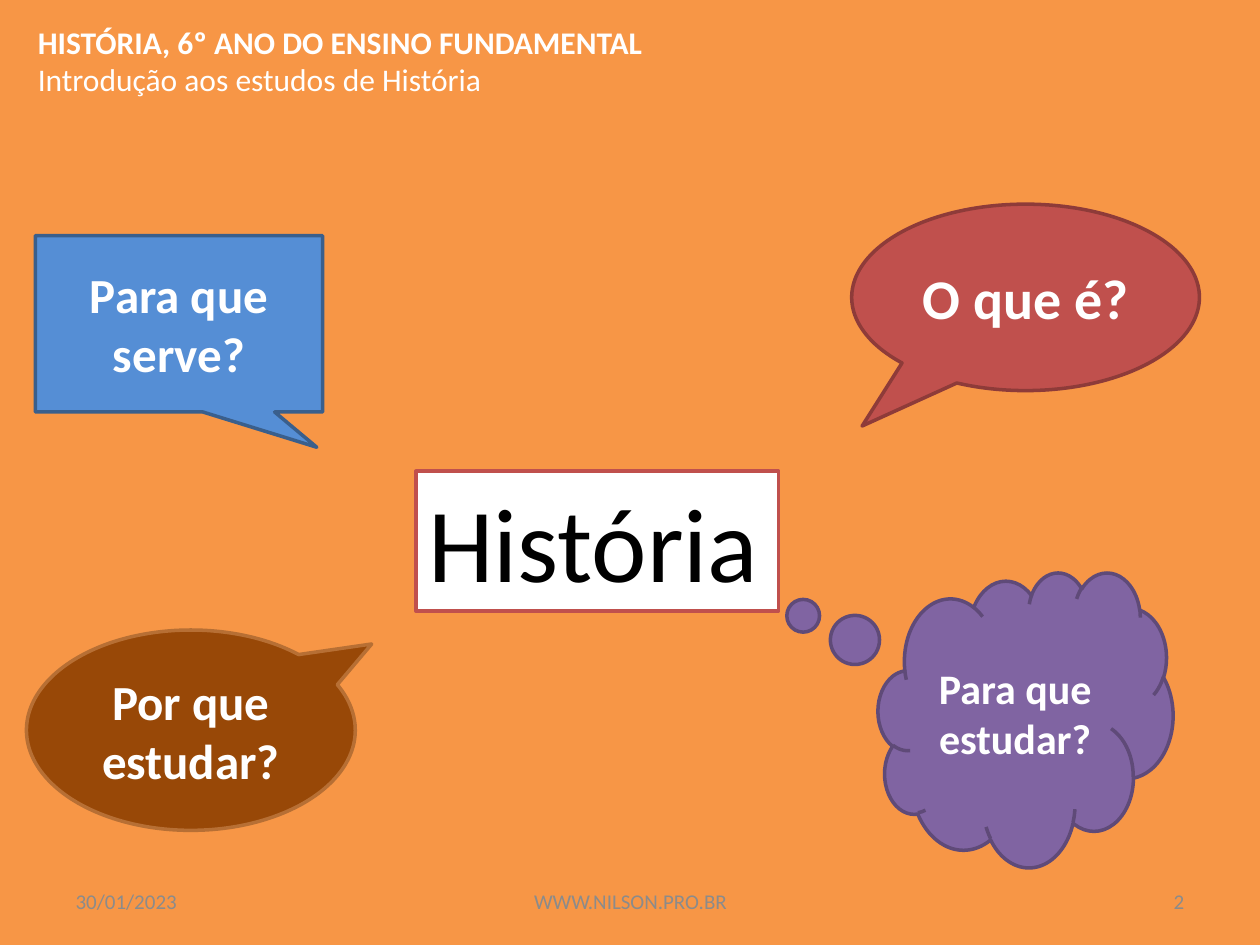
from copy import deepcopy
from dataclasses import dataclass
from typing import Any, NamedTuple, Optional

from pptx import Presentation
from pptx import util as u
from pptx.dml.color import RGBColor
from pptx.enum import shapes, text

ALIGN = text.PP_ALIGN
ANCHOR = text.MSO_ANCHOR
SHAPE = shapes.MSO_SHAPE
HOLDER = shapes.PP_PLACEHOLDER
COLUMNS, ROWS = 100, 75


@dataclass(frozen=True)
class Theme:
    font: str = "Calibri"
    background: str = "F79646"
    white: str = "FFFFFF"
    black: str = "000000"
    red: str = "C0504D"
    dark_red: str = "8E3B39"
    purple: str = "8064A2"
    dark_purple: str = "5F4A78"
    brown: str = "984807"
    light_brown: str = "B76F34"
    blue: str = "558ED5"
    dark_blue: str = "3A5F8C"
    outline: float = 2
    footer_size: int = 12
    header_size: int = 18
    small_size: int = 24
    medium_size: int = 28
    large_size: int = 32
    topic_size: int = 60


class Area(NamedTuple):
    column: float
    row: float
    columns: float
    rows: float


@dataclass(frozen=True)
class Bubble:
    wording: str
    kind: Any
    area: Area
    fill: str
    line: str
    size: int
    pointer: tuple[float, ...] = ()
    color: str = "FFFFFF"
    bold: bool = True
    align: Any = ALIGN.CENTER
    anchor: Any = ANCHOR.MIDDLE


@dataclass(frozen=True)
class FooterItem:
    wording: str
    area: Area
    align: Any


THEME = Theme()

BUBBLES = [
    Bubble("Para que estudar?", SHAPE.CLOUD_CALLOUT, Area(69.7, 45.4, 23.4, 23.4),
           THEME.purple, THEME.dark_purple, THEME.small_size, (-0.88, -0.41)),
    Bubble("Por que estudar?", SHAPE.OVAL_CALLOUT, Area(2.1, 50, 26.1, 15.9),
           THEME.brown, THEME.light_brown, THEME.medium_size, (0.55, -0.43)),
    Bubble("O que é?", SHAPE.OVAL_CALLOUT, Area(67.6, 16.2, 27.6, 14.8),
           THEME.red, THEME.dark_red, THEME.large_size, (-0.47, 0.69)),
    Bubble("História", SHAPE.RECTANGLE, Area(33, 37.4, 28.8, 11.1),
           THEME.white, THEME.red, THEME.topic_size, color=THEME.black,
           bold=False, align=ALIGN.LEFT, anchor=ANCHOR.TOP),
    Bubble("Para que serve?", SHAPE.RECTANGULAR_CALLOUT, Area(2.8, 18.7, 22.8, 14),
           THEME.blue, THEME.dark_blue, THEME.medium_size, (0.48, 0.7)),
]

FOOTER = {
    HOLDER.DATE: FooterItem("30/01/2023", Area(5, 69.5, 23.3, 4), ALIGN.LEFT),
    HOLDER.FOOTER: FooterItem("WWW.NILSON.PRO.BR", Area(34.2, 69.5, 31.7, 4),
                              ALIGN.CENTER),
    HOLDER.SLIDE_NUMBER: FooterItem("2", Area(71.7, 69.5, 23.3, 4), ALIGN.RIGHT),
}


def set_attributes(target: Any, values: dict[str, Any]) -> None:
    for name, value in values.items():
        setattr(target, name, value)


def place(presentation: Any, area: Area) -> dict[str, int]:
    column = presentation.slide_width / COLUMNS
    row = presentation.slide_height / ROWS
    return {
        "left": round(area.column * column),
        "top": round(area.row * row),
        "width": round(area.columns * column),
        "height": round(area.rows * row),
    }


def write(shape: Any, lines: list[tuple[str, bool]], size: int,
          color: Optional[str], align: Any, anchor: Any) -> None:
    frame = shape.text_frame
    set_attributes(frame, {"word_wrap": True, "auto_size": text.MSO_AUTO_SIZE.NONE,
                           "vertical_anchor": anchor})
    frame.text = "\n".join(wording for wording, _ in lines)
    for paragraph, (_, bold) in zip(frame.paragraphs, lines):
        paragraph.alignment = align
        font = paragraph.runs[0].font
        set_attributes(font, {"name": THEME.font, "size": u.Pt(size), "bold": bold})
        if color:
            font.color.rgb = RGBColor.from_string(color)


def draw_header(presentation: Any, slide: Any) -> None:
    title = slide.shapes.title
    set_attributes(title, place(presentation, Area(2, 1.3, 55.1, 7.1)))
    lines = [("HISTÓRIA, 6º ANO DO ENSINO FUNDAMENTAL", True),
             ("Introdução aos estudos de História", False)]
    write(title, lines, THEME.header_size, THEME.white, ALIGN.LEFT, ANCHOR.TOP)


def draw_bubble(presentation: Any, slide: Any, bubble: Bubble) -> None:
    shape = slide.shapes.add_shape(bubble.kind, **place(presentation, bubble.area))
    shape.shadow.inherit = False
    for index, value in enumerate(bubble.pointer):
        shape.adjustments[index] = value
    shape.fill.solid()
    shape.fill.fore_color.rgb = RGBColor.from_string(bubble.fill)
    shape.line.color.rgb = RGBColor.from_string(bubble.line)
    shape.line.width = u.Pt(THEME.outline)
    write(shape, [(bubble.wording, bubble.bold)], bubble.size, bubble.color,
          bubble.align, bubble.anchor)


def draw_footer(presentation: Any, slide: Any) -> None:
    for source in slide.slide_layout.placeholders:
        item = FOOTER.get(source.placeholder_format.type)
        if item is None:
            continue
        element = deepcopy(source.element)
        element.nvSpPr.cNvPr.id = max(shape.shape_id for shape in slide.shapes) + 1
        slide.shapes.element.append(element)
        holder = slide.shapes[-1]
        set_attributes(holder, place(presentation, item.area))
        write(holder, [(item.wording, False)], THEME.footer_size, None,
              item.align, ANCHOR.MIDDLE)


def main() -> None:
    presentation = Presentation()
    set_attributes(presentation, {"slide_width": u.Inches(10),
                                  "slide_height": u.Inches(7.5)})
    slide = presentation.slides.add_slide(
        presentation.slide_layouts.get_by_name("Title Only"))
    slide.background.fill.solid()
    slide.background.fill.fore_color.rgb = RGBColor.from_string(THEME.background)
    draw_header(presentation, slide)
    for bubble in BUBBLES:
        draw_bubble(presentation, slide, bubble)
    draw_footer(presentation, slide)
    presentation.save("out.pptx")


if __name__ == "__main__":
    main()
